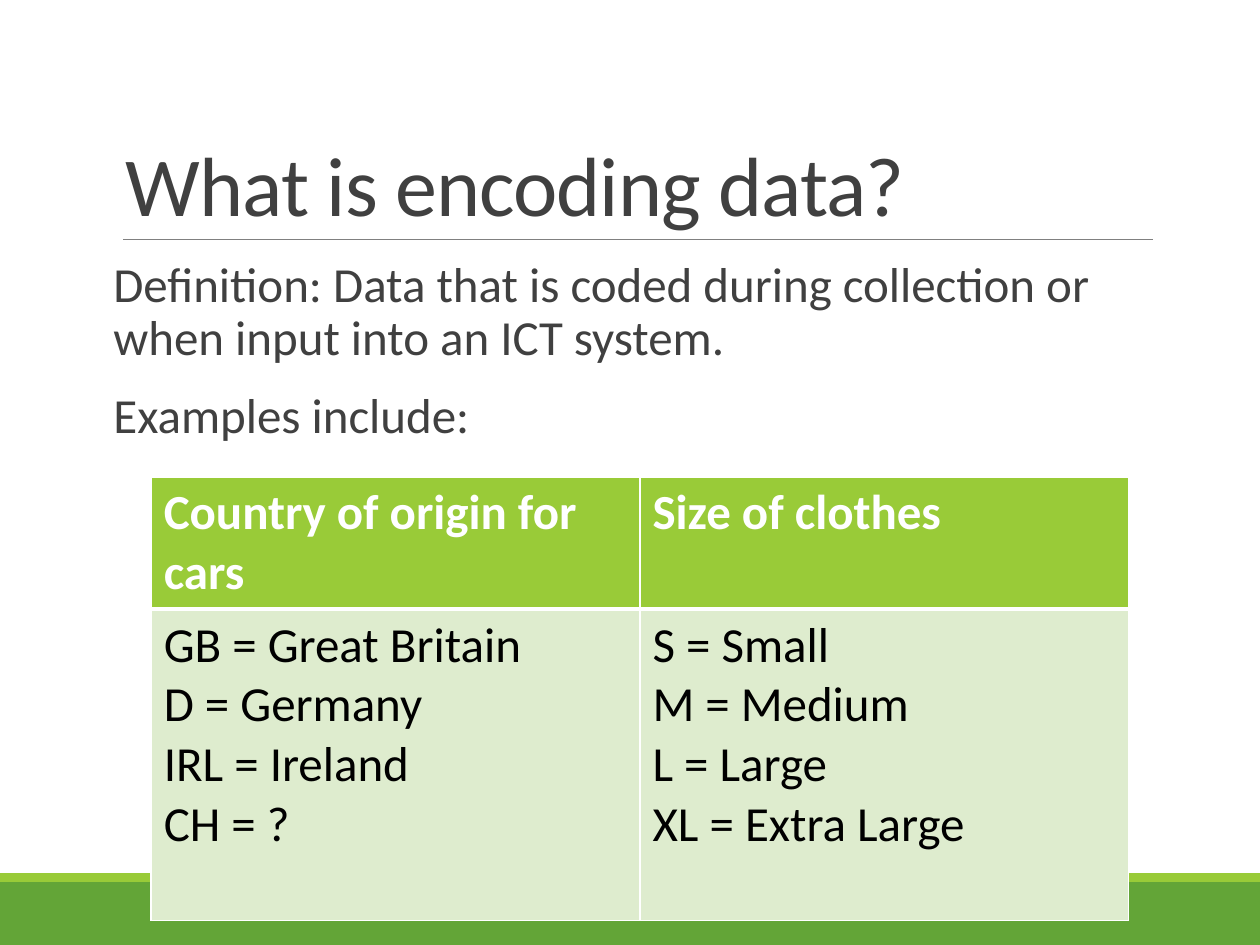
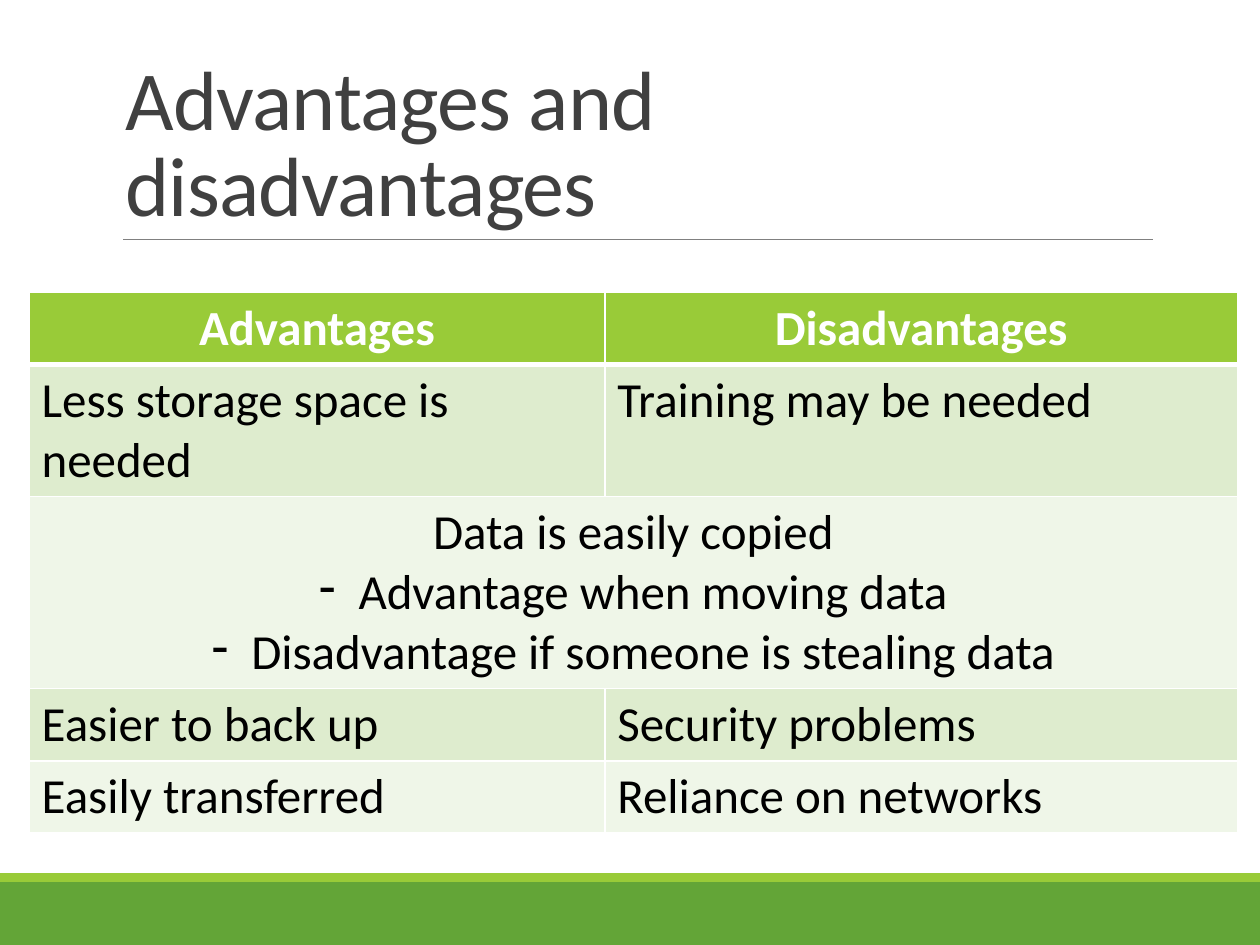
from pptx import Presentation
from pptx.dml.color import RGBColor
from pptx.enum.shapes import MSO_CONNECTOR as Connector, MSO_SHAPE as Preset
from pptx.enum.text import MSO_ANCHOR as Anchor, PP_ALIGN as Align
from pptx.oxml.ns import qn
from pptx.util import Pt
from lxml.etree import SubElement

COLOURS = {
    "band": "63A537", "accent": "99CB38", "rule": "808080", "text": "404040",
    "white": "FFFFFF", "black": "000000", "odd_row": "DEECCE", "even_row": "EFF6E8",
}
WIDTH, HEIGHT = 720, 540
BODY_SIZE = 28
LINE_HEIGHT, CELL_PADDING = 34.15, 7.2
TITLE_FORMAT = {"line_spacing": 0.85}
BODY_FORMAT = {"line_spacing": 0.9, "space_before": Pt(12), "space_after": Pt(2)}
CENTRED = {"alignment": Align.CENTER}


def rgb(name):
    return RGBColor.from_string(COLOURS[name])


def apply(target, values):
    for attribute, value in values.items():
        setattr(target, attribute, value)


def write(frame, lines, size, colour, bold=False, layout=None):
    for index, line in enumerate(lines):
        paragraph = frame.paragraphs[0] if index == 0 else frame.add_paragraph()
        apply(paragraph, layout or {})
        run = paragraph.add_run()
        run.text = line
        apply(run.font, {"name": "Calibri", "size": Pt(size), "bold": bold})
        run.font.color.rgb = rgb(colour)


def add_band(slide, top, height, colour):
    band = slide.shapes.add_shape(Preset.RECTANGLE, 0, Pt(top), Pt(WIDTH), Pt(height))
    band.shadow.inherit = False
    band.fill.solid()
    band.fill.fore_color.rgb = rgb(colour)
    band.line.fill.background()


def add_title_rule(slide):
    rule = slide.shapes.add_connector(
        Connector.STRAIGHT, Pt(70.5), Pt(136.8), Pt(658.8), Pt(136.8))
    rule.line.color.rgb = rgb("rule")
    rule.line.width = Pt(0.5)
    SubElement(rule._element.spPr, qn("a:effectLst"))


def add_text(slide, top, height, lines, size, layout, frame_format):
    frame = slide.shapes.add_textbox(Pt(64.8), Pt(top), Pt(594), Pt(height)).text_frame
    apply(frame, {"word_wrap": True, **frame_format})
    write(frame, lines, size, "text", layout=layout)
    return frame


def add_titled_slide(deck, title):
    slide = deck.slides.add_slide(deck.slide_layouts[6])
    add_band(slide, 504, 36, "band")
    add_band(slide, 499, 5, "accent")
    add_title_rule(slide)
    frame = add_text(slide, 22.3, 114.5, [title], 48, TITLE_FORMAT,
                     {"vertical_anchor": Anchor.BOTTOM, "margin_right": Pt(10)})
    frame.paragraphs[0].runs[0].font._element.set("spc", "-50")
    return slide


def add_borders(cell, row):
    properties = cell._tc.get_or_add_tcPr()
    widths = {"lnL": 1, "lnR": 1, "lnT": 3 if row == 1 else 1, "lnB": 3 if row == 0 else 1}
    for side, width in widths.items():
        border = SubElement(properties, qn(f"a:{side}"), w=str(Pt(width)))
        fill = SubElement(border, qn("a:solidFill"))
        SubElement(fill, qn("a:srgbClr"), val=COLOURS["white"])


def add_dash(paragraph):
    properties = paragraph._p.get_or_add_pPr()
    indent = Pt(22.5)
    properties.set("marL", str(indent))
    properties.set("indent", str(-indent))
    SubElement(properties, qn("a:buChar"), char="-")


def add_table(slide, left, top, column_widths, line_counts, rows, header_layout=None):
    heights = [count * LINE_HEIGHT + CELL_PADDING for count in line_counts]
    table = slide.shapes.add_table(
        len(rows), len(column_widths), Pt(left), Pt(top),
        Pt(sum(column_widths)), Pt(sum(heights))).table
    for column, width in zip(table.columns, column_widths):
        column.width = Pt(width)
    for row, height in zip(table.rows, heights):
        row.height = Pt(height)
    for row, contents in enumerate(rows):
        header = row == 0
        colour = "accent" if header else "odd_row" if row % 2 else "even_row"
        for column in range(len(column_widths)):
            cell = table.cell(row, column)
            add_borders(cell, row)
            cell.fill.solid()
            cell.fill.fore_color.rgb = rgb(colour)
        spanning = len(contents) < len(column_widths)
        if spanning:
            table.cell(row, 0).merge(table.cell(row, len(column_widths) - 1))
        layout = CENTRED if spanning else header_layout if header else None
        for column, lines in enumerate(contents):
            write(table.cell(row, column).text_frame, lines, BODY_SIZE,
                  "white" if header else "black", header, layout)
    return table


def build_encoding_slide(deck):
    slide = add_titled_slide(deck, "What is encoding data?")
    add_text(slide, 145.4, 316.8, [
        "Definition: Data that is coded during collection or when input into an ICT system.",
        "Examples include:",
    ], BODY_SIZE, BODY_FORMAT, {"margin_left": 0, "margin_right": 0})
    add_table(slide, 86.4, 272.6, [279.3, 279.3], [2, 5], [
        [["Country of origin for cars"], ["Size of clothes"]],
        [["GB = Great Britain", "D = Germany", "IRL = Ireland", "CH = ?"],
         ["S = Small", "M = Medium", "L = Large", "XL = Extra Large"]],
    ])


def build_comparison_slide(deck):
    slide = add_titled_slide(deck, "Advantages and disadvantages")
    comparison = add_table(slide, 16.6, 167, [329, 361.5], [1, 2, 3, 1, 1], [
        [["Advantages"], ["Disadvantages"]],
        [["Less storage space is needed"], ["Training may be needed"]],
        [["Data is easily copied", "Advantage when moving data",
          "Disadvantage if someone is stealing data"]],
        [["Easier to back up"], ["Security problems"]],
        [["Easily transferred"], ["Reliance on networks"]],
    ], CENTRED)
    for paragraph in comparison.cell(2, 0).text_frame.paragraphs[1:]:
        add_dash(paragraph)


def main():
    deck = Presentation()
    apply(deck, {"slide_width": Pt(WIDTH), "slide_height": Pt(HEIGHT)})
    build_encoding_slide(deck)
    build_comparison_slide(deck)
    deck.save("out.pptx")


if __name__ == "__main__":
    main()
